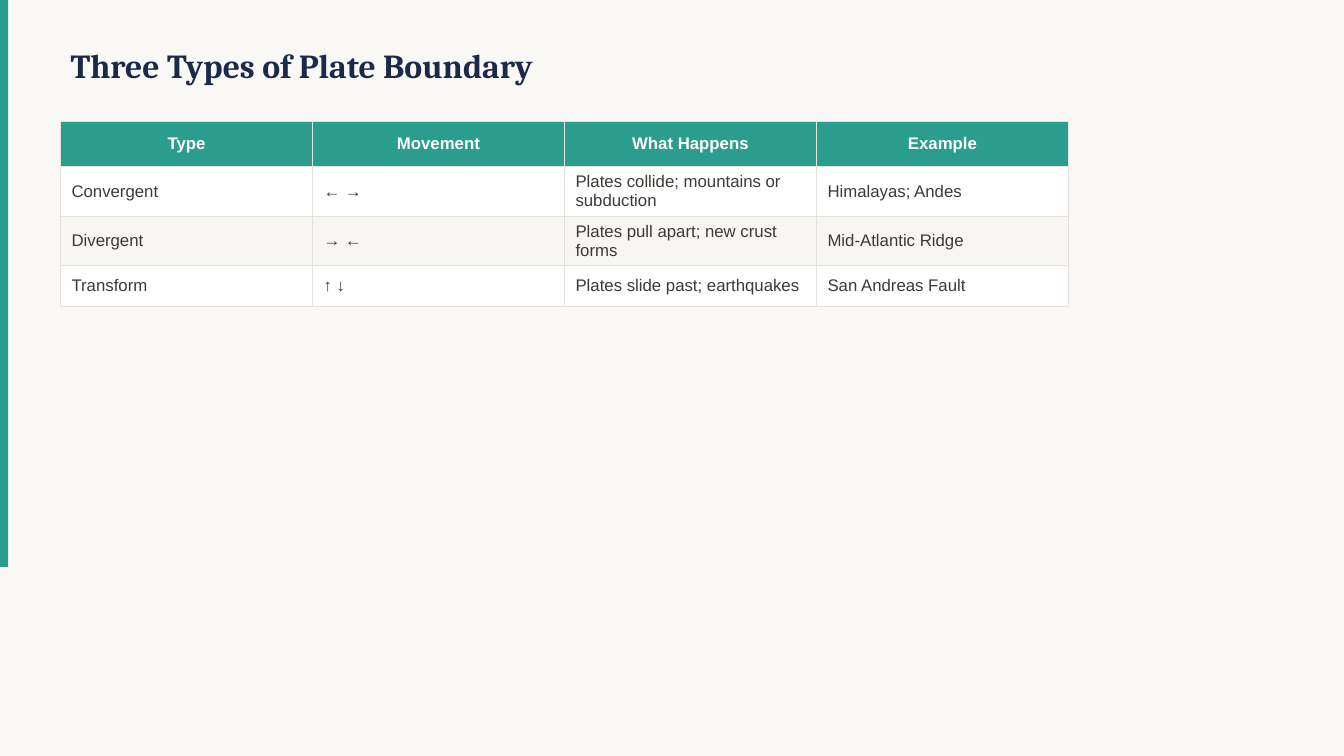
from lxml import etree
from pptx import Presentation
from pptx.dml.color import RGBColor
from pptx.enum import shapes, text
from pptx.oxml import ns
from pptx.util import Pt

TEAL = RGBColor(0x2A, 0x9D, 0x8F)
NAVY = RGBColor(0x1B, 0x2A, 0x4A)
INK = RGBColor(0x3D, 0x3A, 0x36)
CREAM = RGBColor(0xFA, 0xF8, 0xF5)
BAND = RGBColor(0xF8, 0xF6, 0xF3)
WHITE = RGBColor(0xFF, 0xFF, 0xFF)
RULE = RGBColor(0xE5, 0xE2, 0xDC)

BOUNDARIES = [
    ("Type", "Movement", "What Happens", "Example"),
    ("Convergent", "← →", "Plates collide; mountains or subduction", "Himalayas; Andes"),
    ("Divergent", "→ ←", "Plates pull apart; new crust forms", "Mid-Atlantic Ridge"),
    ("Transform", "↑ ↓", "Plates slide past; earthquakes", "San Andreas Fault"),
]


def add_run(paragraph, words, font, size, color, bold):
    run = paragraph.add_run()
    run.text = words
    run.font.name = font
    run.font.size = Pt(size)
    run.font.bold = bold
    run.font.color.rgb = color


def add_borders(cell):
    properties = cell._tc.get_or_add_tcPr()
    for side in ("lnL", "lnR", "lnT", "lnB"):
        line = etree.SubElement(properties, ns.qn(f"a:{side}"), w=str(Pt(0.5)))
        fill = etree.SubElement(line, ns.qn("a:solidFill"))
        etree.SubElement(fill, ns.qn("a:srgbClr"), val=str(RULE))


# Slide and background
deck = Presentation()
deck.slide_width, deck.slide_height = Pt(960), Pt(540)
slide = deck.slides.add_slide(deck.slide_layouts[5])
slide.background.fill.solid()
slide.background.fill.fore_color.rgb = CREAM

# Accent bar on the left edge
accent = slide.shapes.add_shape(
    shapes.MSO_SHAPE.RECTANGLE, Pt(0), Pt(0), Pt(5.76), Pt(405))
accent.shadow.inherit = False
accent.fill.solid()
accent.fill.fore_color.rgb = TEAL
accent.line.fill.background()

# Title
title = slide.shapes.title
title.left, title.top, title.width, title.height = Pt(43.2), Pt(21.6), Pt(720), Pt(50.4)
title.text_frame.word_wrap = True
title.text_frame.auto_size = text.MSO_AUTO_SIZE.NONE
title.text_frame.vertical_anchor = text.MSO_ANCHOR.MIDDLE
heading = title.text_frame.paragraphs[0]
heading.alignment = text.PP_ALIGN.LEFT
add_run(heading, "Three Types of Plate Boundary", "Cambria", 24, NAVY, True)

# Table of boundary types
boundaries = slide.shapes.add_table(
    len(BOUNDARIES), len(BOUNDARIES[0]), Pt(43.2), Pt(86.4), Pt(720), Pt(118.8)).table
for column in boundaries.columns:
    column.width = Pt(180)

for r, entries in enumerate(BOUNDARIES):
    header = r == 0
    boundaries.rows[r].height = Pt(32.4 if header else 28.8)
    for c, words in enumerate(entries):
        cell = boundaries.cell(r, c)
        add_borders(cell)
        cell.fill.solid()
        cell.fill.fore_color.rgb = TEAL if header else WHITE if r % 2 else BAND
        cell.vertical_anchor = text.MSO_ANCHOR.MIDDLE
        cell.margin_left = cell.margin_right = Pt(7.92)
        cell.margin_top = cell.margin_bottom = Pt(4.32)
        paragraph = cell.text_frame.paragraphs[0]
        paragraph.alignment = text.PP_ALIGN.CENTER if header else text.PP_ALIGN.LEFT
        add_run(paragraph, words, "Arial", 12, WHITE if header else INK, header)

deck.save("out.pptx")
